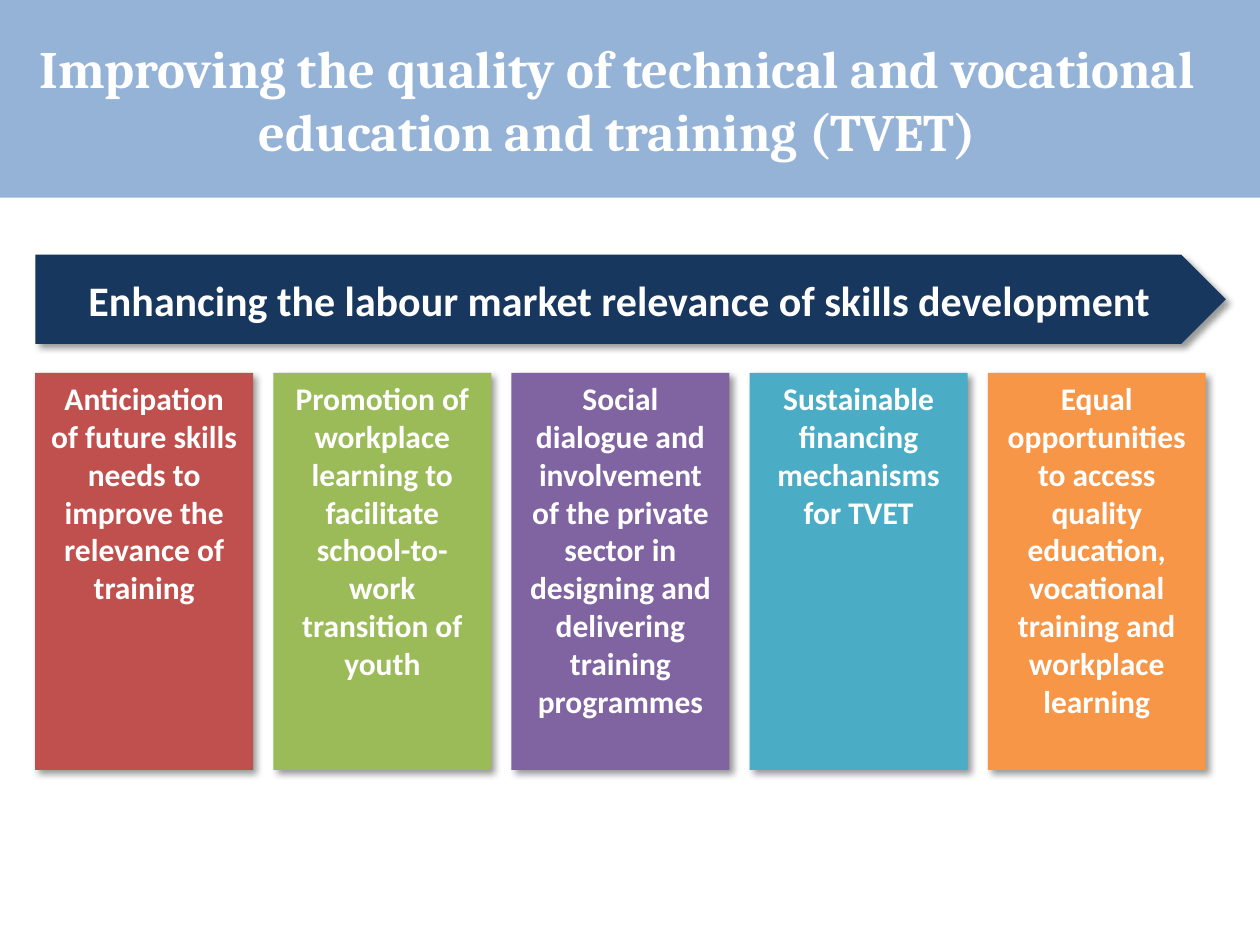
from dataclasses import dataclass

from lxml import etree
from pptx import Presentation
from pptx.dml.color import RGBColor
from pptx.enum.shapes import MSO_SHAPE
from pptx.enum.text import MSO_ANCHOR, MSO_AUTO_SIZE, PP_ALIGN
from pptx.oxml.ns import qn
from pptx.util import Inches, Pt

RECTANGLE, PENTAGON = MSO_SHAPE.RECTANGLE, MSO_SHAPE.PENTAGON
TOP, MIDDLE = MSO_ANCHOR.TOP, MSO_ANCHOR.MIDDLE
CENTER = PP_ALIGN.CENTER
NO_AUTOFIT = MSO_AUTO_SIZE.NONE


@dataclass(frozen=True)
class Theme:
    """Colours, fonts and type sizes of the slide."""
    band: str = "95B3D7"
    goal: str = "17375E"
    text: str = "FFFFFF"
    shadow: str = "000000"
    title_font: str = "Cambria"
    body_font: str = "Calibri"
    title_size: int = 30
    goal_size: int = 24
    pillar_size: int = 18


THEME = Theme()
WIDTH, HEIGHT = 10, 7.5
LEFT = 0.28
PILLAR_TOP, PILLAR_WIDTH, PILLAR_HEIGHT, PILLAR_STEP = 2.96, 1.73, 3.15, 1.89
TITLE = "Improving the quality of technical and vocational education and training (TVET)"
GOAL = "Enhancing the labour market relevance of skills development"
PILLARS = [
    ("Anticipation of future skills needs to improve the relevance of training", "C0504D"),
    ("Promotion of workplace learning to facilitate school-to-work transition of youth", "9BBB59"),
    ("Social dialogue and involvement of the private sector in designing and "
     "delivering training programmes", "8064A2"),
    ("Sustainable financing mechanisms for TVET", "4BACC6"),
    ("Equal opportunities to access quality education, vocational training and "
     "workplace learning", "F79646"),
]


def apply_format(target, values):
    """Set every attribute named in values on the target."""
    for attribute, value in values.items():
        setattr(target, attribute, value)


def write_text(holder, text, font, size, anchor):
    """Write one centred bold paragraph into a shape."""
    frame = holder.text_frame
    apply_format(frame, {"text": text, "word_wrap": True,
                         "auto_size": NO_AUTOFIT, "vertical_anchor": anchor})
    paragraph = frame.paragraphs[0]
    paragraph.alignment = CENTER
    apply_format(paragraph.runs[0].font, {"name": font, "size": Pt(size), "bold": True})
    paragraph.runs[0].font.color.rgb = RGBColor.from_string(THEME.text)


def add_block(slide, outline, box, fill):
    """Add a flat filled shape without an outline."""
    block = slide.shapes.add_shape(outline, *map(Inches, box))
    block.fill.solid()
    block.fill.fore_color.rgb = RGBColor.from_string(fill)
    block.line.fill.background()
    block.shadow.inherit = False
    return block


def cast_shadow(block):
    """Give a shape a soft shadow towards the lower right."""
    effects = block.element.spPr.find(qn("a:effectLst"))
    outer = etree.SubElement(effects, qn("a:outerShdw"), blurRad=str(Pt(4)),
                             dist=str(Pt(3)), dir="2700000", algn="tl", rotWithShape="0")
    color = etree.SubElement(outer, qn("a:srgbClr"), val=THEME.shadow)
    etree.SubElement(color, qn("a:alpha"), val="40000")


def add_header(slide):
    """Place the title on its coloured band."""
    band = add_block(slide, RECTANGLE, (0, 0, WIDTH, 1.57), THEME.band)
    title = slide.shapes.title
    apply_format(title, {"left": Inches(0), "top": Inches(0.23),
                         "width": Inches(9.8), "height": Inches(1.11)})
    write_text(title, TITLE, THEME.title_font, THEME.title_size, MIDDLE)
    band.element.addnext(title.element)


def add_goal(slide):
    """Add the arrow that names the overall goal."""
    goal = add_block(slide, PENTAGON, (LEFT, 2.02, 9.45, 0.71), THEME.goal)
    cast_shadow(goal)
    write_text(goal, GOAL, THEME.body_font, THEME.goal_size, MIDDLE)


def add_pillar(slide, column, text, fill):
    """Add one pillar in the given column."""
    box = (LEFT + column * PILLAR_STEP, PILLAR_TOP, PILLAR_WIDTH, PILLAR_HEIGHT)
    pillar = add_block(slide, RECTANGLE, box, fill)
    cast_shadow(pillar)
    write_text(pillar, text, THEME.body_font, THEME.pillar_size, TOP)


def main():
    """Build the slide and save it."""
    deck = Presentation()
    apply_format(deck, {"slide_width": Inches(WIDTH), "slide_height": Inches(HEIGHT)})
    slide = deck.slides.add_slide(deck.slide_layouts.get_by_name("Title Only"))
    add_header(slide)
    add_goal(slide)
    for column, (text, fill) in enumerate(PILLARS):
        add_pillar(slide, column, text, fill)
    deck.save("out.pptx")


if __name__ == "__main__":
    main()
